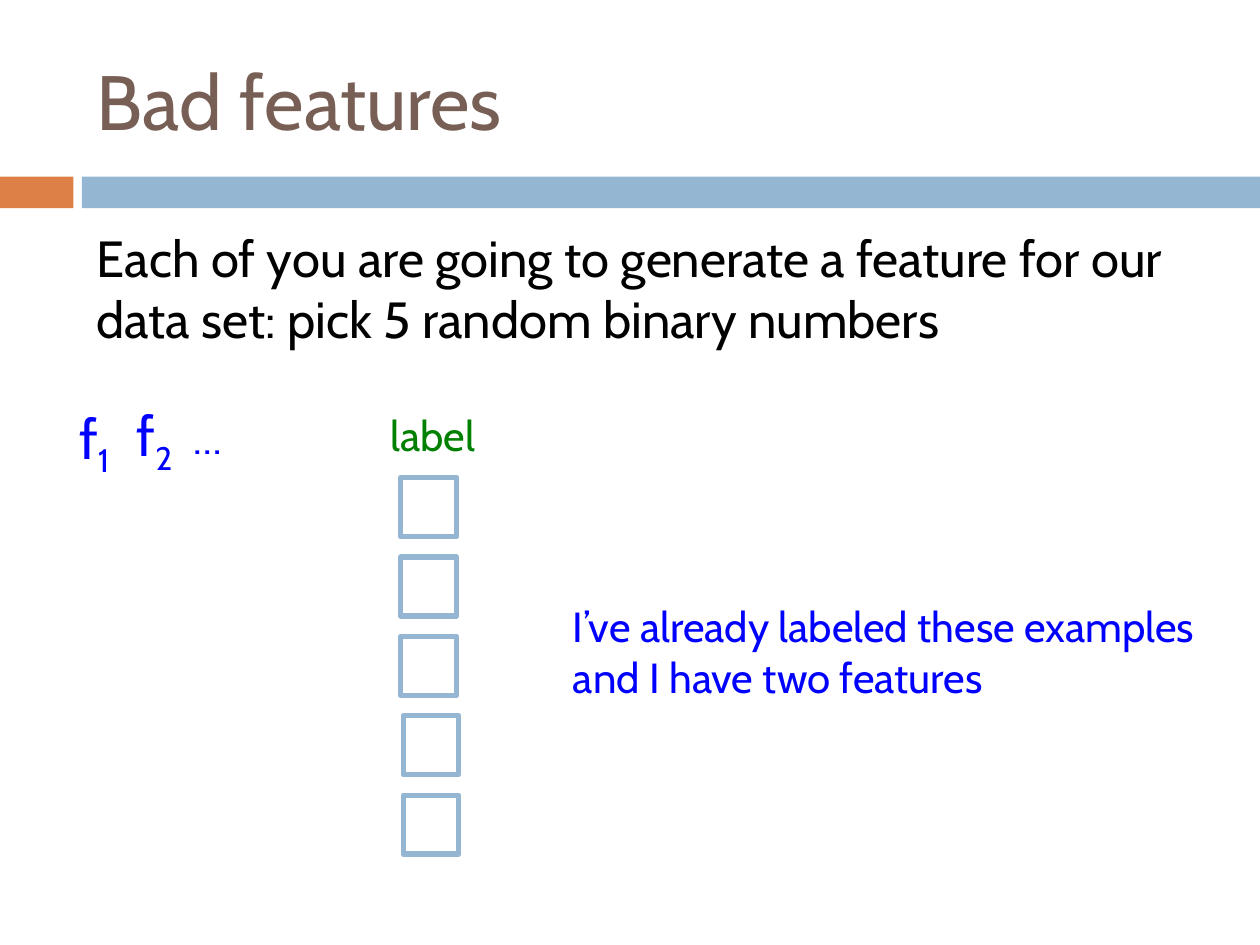
from pptx import Presentation
from pptx import util as u
from pptx.dml import color
from pptx.enum import shapes, text

BLUE, ORANGE, BROWN = "94B6D2", "DD8047", "775F55"
INK, GREEN, BLACK = "0000FF", "008000", "000000"


def rgb(code):
    return color.RGBColor.from_string(code)


class Deck:
    """Holds the style and the current slide, and draws each kind of element."""

    font = "Cabin"

    def __init__(self, wide, high):
        self.prs = Presentation()
        self.prs.slide_width, self.prs.slide_height = u.Cm(wide), u.Cm(high)
        self.slide = self.prs.slides.add_slide(self.prs.slide_layouts[5])

    def run(self, para, words, size, hue, base=0):
        run = para.add_run()
        run.text = words
        run.font.name, run.font.size = self.font, u.Pt(size)
        run.font.color.rgb = rgb(hue)
        if base:
            run._r.get_or_add_rPr().set("baseline", str(base * 1000))

    def title(self, box, words, size, hue):
        head = self.slide.shapes.title
        head.left, head.top, head.width, head.height = map(u.Cm, box)
        frame = head.text_frame
        frame.auto_size = text.MSO_AUTO_SIZE.NONE
        frame.vertical_anchor = text.MSO_ANCHOR.MIDDLE
        para = frame.paragraphs[0]
        para.alignment = text.PP_ALIGN.LEFT
        self.run(para, words, size, hue)

    def label(self, box, words, size, hue, sub="", wrap=False, before=0):
        frame = self.slide.shapes.add_textbox(*map(u.Cm, box)).text_frame
        frame.word_wrap = wrap
        para = frame.paragraphs[0]
        para.space_before = u.Pt(before)
        self.run(para, words, size, hue)
        if sub:
            self.run(para, sub, size, hue, -25)

    def rect(self, box, fill=None, line=None):
        shape = self.slide.shapes.add_shape(shapes.MSO_SHAPE.RECTANGLE, *map(u.Cm, box))
        shape.shadow.inherit = False
        if fill:
            shape.fill.solid()
            shape.fill.fore_color.rgb = rgb(fill)
        else:
            shape.fill.background()
        if line:
            shape.line.color.rgb = rgb(line)
            shape.line.width = u.Pt(3)
        else:
            shape.line.fill.background()


def main():
    deck = Deck(25.4, 19.05)
    deck.rect((0, 3.56, 1.48, 0.64), fill=ORANGE)
    deck.rect((1.65, 3.56, 23.75, 0.64), fill=BLUE)
    deck.title((1.7, 0.64, 22.66, 2.74), "Bad features", 44, BROWN)
    deck.label(
        (1.7, 4.45, 22.66, 3.5),
        "Each of you are going to generate a feature for our data set: "
        "pick 5 random binary numbers",
        29, BLACK, wrap=True, before=7,
    )

    deck.label((1.35, 8, 1.32, 1.62), "f", 32, INK, sub="1")
    deck.label((2.51, 7.95, 1.32, 1.62), "f", 32, INK, sub="2")
    deck.label((3.66, 8.2, 1.37, 1.27), "…", 24, INK)
    deck.label((7.62, 8.13, 2.26, 1.27), "label", 24, GREEN)

    for row in range(5):
        left = 8.08 if row < 3 else 8.13
        deck.rect((left, 9.63 + 1.6 * row, 1.12, 1.19), line=BLUE)

    deck.label(
        (11.3, 11.99, 13.06, 2.31),
        "I’ve already labeled these examples and I have two features",
        24, INK, wrap=True,
    )
    deck.prs.save("out.pptx")


if __name__ == "__main__":
    main()
